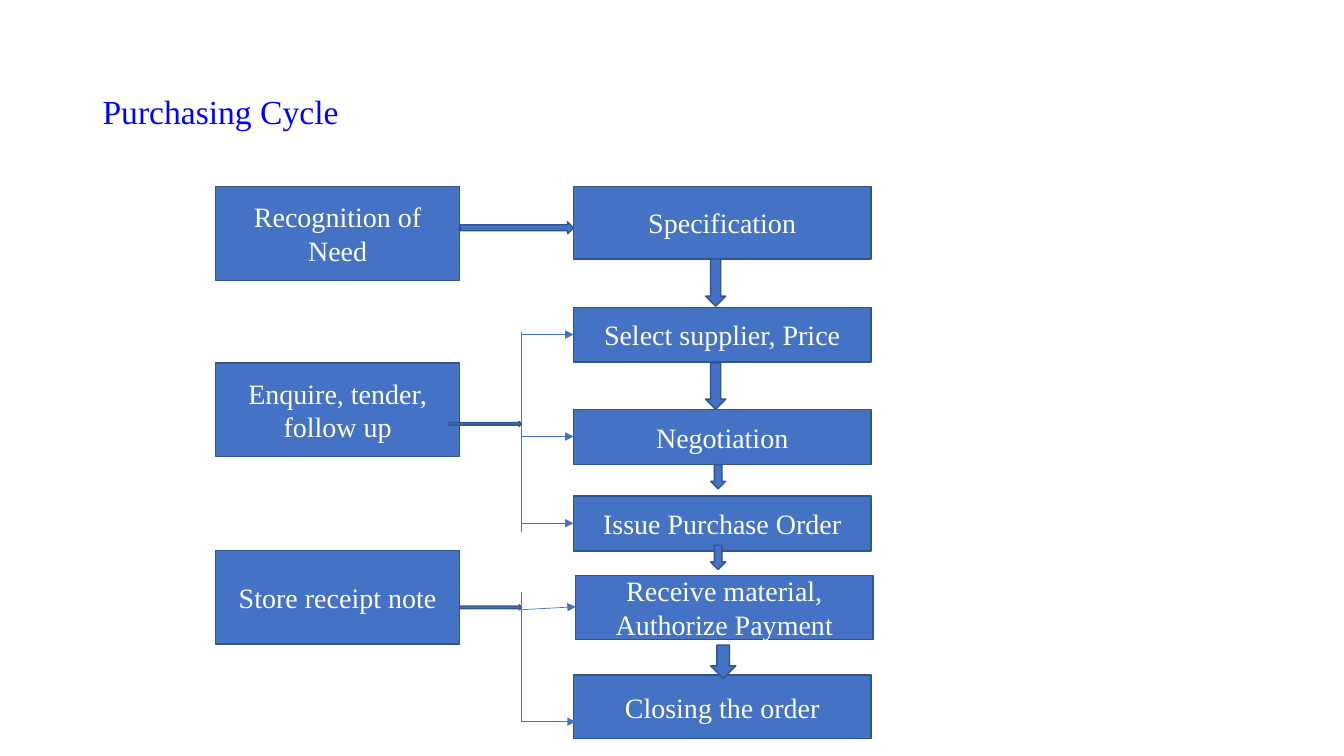
from lxml import etree
from pptx import Presentation
from pptx.dml.color import RGBColor
from pptx.enum.shapes import MSO_CONNECTOR, MSO_SHAPE
from pptx.enum.text import MSO_ANCHOR, PP_ALIGN
from pptx.oxml.ns import qn
from pptx.util import Pt

STRAIGHT = MSO_CONNECTOR.STRAIGHT
RECTANGLE = MSO_SHAPE.RECTANGLE
RIGHT_ARROW = MSO_SHAPE.RIGHT_ARROW
DOWN_ARROW = MSO_SHAPE.DOWN_ARROW
MIDDLE = MSO_ANCHOR.MIDDLE
CENTER = PP_ALIGN.CENTER

FONT = "Times New Roman"
BLUE = "4472C4"
OUTLINE = "325491"
WHITE = "FFFFFF"
TITLE_BLUE = "0000FF"

TRIGGER_LEFT, TRIGGER_WIDTH, TRIGGER_HEIGHT = 154.1, 174.2, 67
STEP_LEFT, STEP_WIDTH = 409.7, 212.4
BRACKET_LEFT = 372.2

TRIGGERS = [
    ("Recognition of Need", 133.2),
    ("Enquire, tender, follow up", 259.2),
    ("Store receipt note", 393.1),
]
STEPS = [
    ("Specification", STEP_LEFT, 133.2, 51.8),
    ("Select supplier, Price", STEP_LEFT, 219.6, 39),
    ("Negotiation", STEP_LEFT, 292.3, 39.5),
    ("Issue Purchase Order", STEP_LEFT, 354.2, 39.5),
    ("Receive material, Authorize Payment", 411.2, 411.1, 45.5),
    ("Closing the order", STEP_LEFT, 482.2, 45.5),
]
TRIGGER_ARROWS = [
    (328.9, 158.4, 80.8, 8.6),
    (321, 301, 51.6, 3.6),
    (328.9, 432, 43.8, 3.6),
]
STEP_ARROWS = [
    (504, 185, 14.4, 33.8),
    (504, 259.2, 14.4, 33.1),
    (507.6, 331.9, 10.8, 17.3),
    (507.6, 389.5, 10.8, 17.3),
    (507.6, 460.8, 18, 23.8),
]
BRACKET_LINES = [(236.9, 380.2), (422.6, 515.5)]
BRANCHES = [
    (BRACKET_LEFT, 239, STEP_LEFT, 239),
    (BRACKET_LEFT, 311.8, STEP_LEFT, 311.8),
    (BRACKET_LEFT, 373.7, STEP_LEFT, 373.7),
    (370.8, 435.6, 411.2, 433.4),
    (BRACKET_LEFT, 515.5, 411.2, 515.5),
]


def color(value):
    return RGBColor.from_string(value)


def add_run(paragraph, text, size, font_color):
    run = paragraph.add_run()
    run.text = text
    run.font.name = FONT
    run.font.size = Pt(size)
    run.font.color.rgb = color(font_color)


def add_title(slide, text):
    box = slide.shapes.add_textbox(Pt(66.2), Pt(28.8), Pt(828), Pt(104.4))
    frame = box.text_frame
    frame.word_wrap = True
    frame.vertical_anchor = MIDDLE
    paragraph = frame.paragraphs[0]
    paragraph.line_spacing = 0.9
    add_run(paragraph, text, 24, TITLE_BLUE)


def add_block(slide, kind, left, top, width, height):
    shape = slide.shapes.add_shape(kind, Pt(left), Pt(top), Pt(width), Pt(height))
    shape.shadow.inherit = False
    shape.fill.solid()
    shape.fill.fore_color.rgb = color(BLUE)
    shape.line.color.rgb = color(OUTLINE)
    shape.line.width = Pt(1)
    return shape


def add_box(slide, text, left, top, width, height):
    frame = add_block(slide, RECTANGLE, left, top, width, height).text_frame
    frame.word_wrap = True
    frame.vertical_anchor = MIDDLE
    paragraph = frame.paragraphs[0]
    paragraph.alignment = CENTER
    add_run(paragraph, text, 20, WHITE)


def add_line(slide, start_x, start_y, end_x, end_y, arrow=False):
    connector = slide.shapes.add_connector(
        STRAIGHT, Pt(start_x), Pt(start_y), Pt(end_x), Pt(end_y)
    )
    connector.line.color.rgb = color(BLUE)
    connector.line.width = Pt(0.5)
    if arrow:
        line = connector.line._get_or_add_ln()
        etree.SubElement(line, qn("a:tailEnd"), type="triangle")
    etree.SubElement(connector._element.spPr, qn("a:effectLst"))


def main():
    presentation = Presentation()
    presentation.slide_width = Pt(960)
    presentation.slide_height = Pt(540)
    slide = presentation.slides.add_slide(presentation.slide_layouts[6])

    add_title(slide, "Purchasing Cycle")
    for text, top in TRIGGERS:
        add_box(slide, text, TRIGGER_LEFT, top, TRIGGER_WIDTH, TRIGGER_HEIGHT)
    for text, left, top, height in STEPS:
        add_box(slide, text, left, top, STEP_WIDTH, height)
    for bounds in TRIGGER_ARROWS:
        add_block(slide, RIGHT_ARROW, *bounds)
    for top, bottom in BRACKET_LINES:
        add_line(slide, BRACKET_LEFT, top, BRACKET_LEFT, bottom)
    for ends in BRANCHES:
        add_line(slide, *ends, arrow=True)
    for bounds in STEP_ARROWS:
        add_block(slide, DOWN_ARROW, *bounds)

    presentation.save("out.pptx")


if __name__ == "__main__":
    main()
